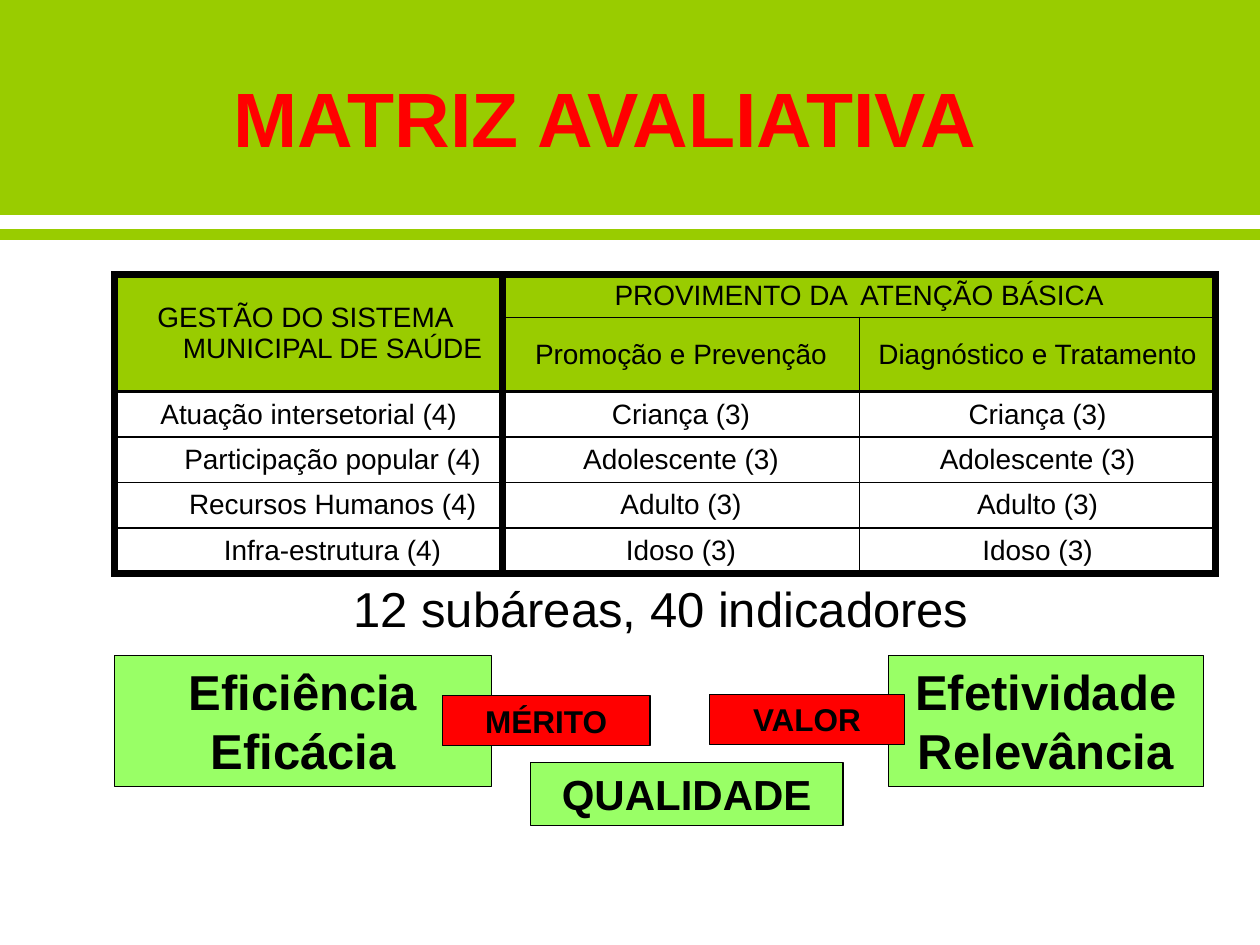
from lxml import etree
from pptx import Presentation, util as u
from pptx.dml.color import RGBColor
from pptx.enum import shapes, text
from pptx.oxml.ns import qn

GREEN = RGBColor(0x99, 0xCC, 0x00)
LIGHT_GREEN = RGBColor(0x99, 0xFF, 0x66)
RED = RGBColor(0xFF, 0x00, 0x00)
BLACK = RGBColor(0x00, 0x00, 0x00)
WHITE = RGBColor(0xFF, 0xFF, 0xFF)

presentation = Presentation()
presentation.slide_width, presentation.slide_height = u.Inches(10), u.Inches(7.5)
slide = presentation.slides.add_slide(presentation.slide_layouts[5])

# Grid of 100 columns by 75 rows
COLUMN = presentation.slide_width / 100
ROW = presentation.slide_height / 75


def box(left, top, width, height):
    return [int(n) for n in (left * COLUMN, top * ROW, width * COLUMN, height * ROW)]


def write(frame, content, size, color=BLACK, bold=False, anchor=text.MSO_ANCHOR.TOP,
          margin=0, indent=0):
    frame.word_wrap = True
    frame.vertical_anchor = anchor
    frame.text = content
    for paragraph in frame.paragraphs:
        paragraph.alignment = text.PP_ALIGN.CENTER
        properties = paragraph._p.get_or_add_pPr()
        properties.set("marL", str(int(margin * COLUMN)))
        properties.set("indent", str(int(indent * COLUMN)))
        font = paragraph.font
        for run in paragraph.runs:
            font = run.font
            font.name, font.size, font.bold = "Arial", u.Pt(size), bold
            font.color.rgb = color


# Header band and rule
band = slide.shapes.add_shape(shapes.MSO_SHAPE.RECTANGLE, *box(0, 0, 100, 17))
band.shadow.inherit = False
band.fill.solid()
band.fill.fore_color.rgb = GREEN
band.line.color.rgb = GREEN
band.line.width = u.Pt(0.75)

rule_top = int(18.6 * ROW)
rule = slide.shapes.add_connector(shapes.MSO_CONNECTOR.STRAIGHT, 0, rule_top,
                                  presentation.slide_width, rule_top)
rule.line.color.rgb = GREEN
rule.line.width = u.Pt(6)
etree.SubElement(rule._element.spPr, qn("a:effectLst"))

# Title, brought in front of the band
title = slide.shapes.title
title.left, title.top, title.width, title.height = box(14.6, 3, 66.9, 12.5)
write(title.text_frame, "MATRIZ AVALIATIVA", 44, RED, True, text.MSO_ANCHOR.MIDDLE)
slide.shapes._spTree.append(title._element)

# Evaluation table
SHIFTED = ("Participação popular (4)", "Recursos Humanos (4)", "Infra-estrutura (4)")
cells = [
    ["GESTÃO DO SISTEMA \vMUNICIPAL DE SAÚDE", "PROVIMENTO DA  ATENÇÃO BÁSICA", ""],
    ["", "Promoção e Prevenção", "Diagnóstico e Tratamento"],
    ["Atuação intersetorial (4)", "Criança (3)", "Criança (3)"],
    ["Participação popular (4)", "Adolescente (3)", "Adolescente (3)"],
    ["Recursos Humanos (4)", "Adulto (3)", "Adulto (3)"],
    ["Infra-estrutura (4)", "Idoso (3)", "Idoso (3)"],
]
column_widths = [30.8, 28.3, 28.3]
row_heights = [3.4, 5.9] + [3.6] * 4
vertical_lines = [4.5, 4.5, 1, 4.5]
horizontal_lines = [4.5, 1, 2, 1, 1, 1, 4.5]

table = slide.shapes.add_table(
    len(row_heights), len(column_widths),
    *box(9.1, 21.8, sum(column_widths), sum(row_heights))).table
table.first_row = table.horz_banding = False
for column, width in zip(table.columns, column_widths):
    column.width = int(width * COLUMN)
for row, height in zip(table.rows, row_heights):
    row.height = int(height * ROW)
table.cell(0, 0).merge(table.cell(1, 0))
table.cell(0, 1).merge(table.cell(0, 2))

for r, contents in enumerate(cells):
    for c, content in enumerate(contents):
        cell = table.cell(r, c)
        if cell.is_spanned:
            continue
        cell.margin_top = cell.margin_bottom = int(0.3 * ROW)
        cell.vertical_anchor = text.MSO_ANCHOR.MIDDLE
        write(cell.text_frame, content, 16, anchor=None, margin=3.8,
              indent=0 if content in SHIFTED else -3.8)
        edges = {
            "a:lnL": vertical_lines[c],
            "a:lnR": vertical_lines[c + cell.span_width],
            "a:lnT": horizontal_lines[r],
            "a:lnB": horizontal_lines[r + cell.span_height],
        }
        properties = cell._tc.get_or_add_tcPr()
        for tag, width in edges.items():
            border = etree.SubElement(properties, qn(tag), w=str(u.Pt(width)))
            paint = etree.SubElement(border, qn("a:solidFill"))
            etree.SubElement(paint, qn("a:srgbClr"), val=str(BLACK))
        cell.fill.solid()
        cell.fill.fore_color.rgb = GREEN if r < 2 else WHITE

# Summary line
summary = slide.shapes.add_textbox(*box(13, 45.4, 78.9, 5.7))
write(summary.text_frame, "12 subáreas, 40 indicadores", 28)

# Criteria boxes
criteria = [
    ("Eficiência\nEficácia", 28, LIGHT_GREEN, (9.1, 52, 29.9, 10.4)),
    ("Efetividade\nRelevância", 28, LIGHT_GREEN, (70.5, 52, 25, 10.4)),
    ("MÉRITO", 18, RED, (35.1, 55.2, 16.5, 4)),
    ("VALOR", 18, RED, (56.3, 55.1, 15.5, 4)),
    ("QUALIDADE", 24, LIGHT_GREEN, (42.1, 60.5, 24.8, 5)),
]
for content, size, color, position in criteria:
    shape = slide.shapes.add_shape(shapes.MSO_SHAPE.RECTANGLE, *box(*position))
    shape.shadow.inherit = False
    shape.fill.solid()
    shape.fill.fore_color.rgb = color
    shape.line.color.rgb = BLACK
    shape.line.width = u.Pt(0.75)
    write(shape.text_frame, content, size, bold=True)

presentation.save("out.pptx")
